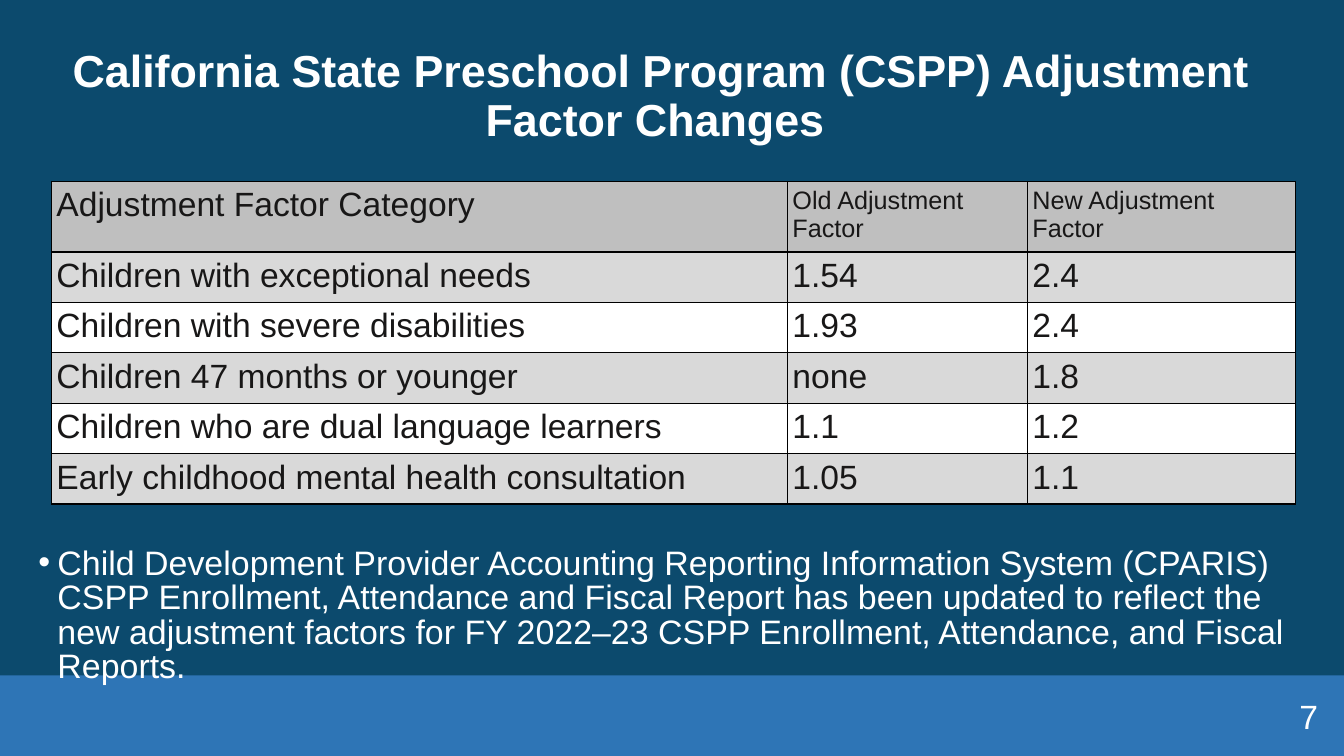
from dataclasses import dataclass

from lxml import etree
from pptx import Presentation
from pptx.dml.color import RGBColor
from pptx.enum.shapes import MSO_SHAPE
from pptx.enum.text import MSO_ANCHOR, MSO_AUTO_SIZE, PP_ALIGN
from pptx.oxml.ns import qn
from pptx.util import Inches, Pt

RECT = MSO_SHAPE.RECTANGLE
MIDDLE = MSO_ANCHOR.MIDDLE
FIXED = MSO_AUTO_SIZE.NONE
LEFT, CENTER, RIGHT = PP_ALIGN.LEFT, PP_ALIGN.CENTER, PP_ALIGN.RIGHT

TITLE = "California State Preschool Program (CSPP) Adjustment Factor Changes "
HEAD = ("Adjustment Factor Category", "Old Adjustment\nFactor", "New Adjustment\nFactor")
FACTORS = [
    ("Children with exceptional needs", "1.54", "2.4"),
    ("Children with severe disabilities", "1.93", "2.4"),
    ("Children 47 months or younger", "none", "1.8"),
    ("Children who are dual language learners", "1.1", "1.2"),
    ("Early childhood mental health consultation", "1.05", "1.1"),
]
NOTE = (
    "Child Development Provider Accounting Reporting Information System (CPARIS) "
    "CSPP Enrollment, Attendance and Fiscal Report has been updated to reflect the "
    "new adjustment factors for FY 2022–23 CSPP Enrollment, Attendance, and Fiscal Reports."
)
PAGE = "7"
COLS = (7.3, 2.38, 2.66)
HEAD_H, ROW_H = 0.7, 0.5


@dataclass(frozen=True)
class Theme:
    font: str = "Arial"
    back: str = "0C4A6D"
    band: str = "2E75B6"
    light: str = "FFFFFF"
    ink: str = "181717"
    head: str = "BFBFBF"
    stripe: str = "D9D9D9"
    rule: str = "000000"
    title: float = 32
    text: float = 24
    note: float = 24.2
    small: float = 18


LOOK = Theme()


def paint(fill, color):
    fill.solid()
    fill.fore_color.rgb = RGBColor.from_string(color)


def place(shape, left, top, width, height):
    shape.left, shape.top = Inches(left), Inches(top)
    shape.width, shape.height = Inches(width), Inches(height)


def style(frame, size, color, align=LEFT, bold=False, lines=None):
    for para in frame.paragraphs:
        para.alignment = align
        para.font.name, para.font.size = LOOK.font, Pt(size)
        para.font.bold = bold
        para.font.color.rgb = RGBColor.from_string(color)
        if lines:
            para.line_spacing = lines
            para.space_before = Pt(0)


def border(cell):
    """Draw a 1 pt rule on all four sides; rules must precede the cell's fill."""
    props = cell._tc.get_or_add_tcPr()
    for spot, side in enumerate(("lnL", "lnR", "lnT", "lnB")):
        line = etree.Element(qn("a:" + side), w=str(Pt(1)))
        solid = etree.SubElement(line, qn("a:solidFill"))
        etree.SubElement(solid, qn("a:srgbClr"), val=LOOK.rule)
        props.insert(spot, line)


def add_band(slide):
    band = slide.shapes.add_shape(RECT, 0, Inches(6.7), Inches(13.33), Inches(0.8))
    band.shadow.inherit = False
    paint(band.fill, LOOK.band)
    band.line.fill.background()
    node = band._element
    node.getparent().insert(2, node)  # behind the placeholders


def add_title(slide):
    title = slide.shapes.title
    place(title, 0.06, 0.24, 13, 1.45)
    frame = title.text_frame
    frame.text = TITLE
    frame.auto_size, frame.vertical_anchor = FIXED, MIDDLE
    style(frame, LOOK.title, LOOK.light, CENTER, True, 0.9)


def add_factors(slide):
    rows = [HEAD, *FACTORS]
    heights = [HEAD_H] + [ROW_H] * len(FACTORS)
    table = slide.shapes.add_table(
        len(rows), len(COLS), Inches(0.51), Inches(1.8),
        Inches(sum(COLS)), Inches(sum(heights))).table
    for col, width in zip(table.columns, COLS):
        col.width = Inches(width)
    for r, (row, height) in enumerate(zip(rows, heights)):
        table.rows[r].height = Inches(height)
        color = LOOK.head if r == 0 else LOOK.stripe if r % 2 else LOOK.light
        for c, text in enumerate(row):
            cell = table.cell(r, c)
            cell.text = text
            cell.margin_left = cell.margin_right = Inches(0.05)
            cell.margin_top = cell.margin_bottom = Inches(0.05)
            paint(cell.fill, color)
            border(cell)
            size = LOOK.small if r == 0 and c else LOOK.text
            style(cell.text_frame, size, LOOK.ink)


def add_note(slide):
    body = slide.placeholders[1]
    place(body, 0.28, 4.92, 12.89, 1.88)
    frame = body.text_frame
    frame.text = NOTE
    frame.auto_size = FIXED
    frame.margin_top = Inches(0.52)
    style(frame, LOOK.note, LOOK.light, lines=0.84)
    props = frame.paragraphs[0]._p.get_or_add_pPr()
    props.set("marL", str(Inches(0.19)))
    props.set("indent", str(-Inches(0.19)))
    etree.SubElement(props, qn("a:buChar"), char="•")
    # Bullets must come before the default run properties.
    run = props.find(qn("a:defRPr"))
    if run is not None:
        props.append(run)


def add_page(slide):
    box = slide.shapes.add_textbox(Inches(10.17), Inches(6.9), Inches(3), Inches(0.4))
    frame = box.text_frame
    frame.word_wrap, frame.vertical_anchor = True, MIDDLE
    frame.text = PAGE
    style(frame, LOOK.text, LOOK.light, RIGHT)


def main():
    deck = Presentation()
    deck.slide_width, deck.slide_height = Inches(13.33), Inches(7.5)
    slide = deck.slides.add_slide(deck.slide_layouts[1])
    paint(slide.background.fill, LOOK.back)
    add_band(slide)
    add_title(slide)
    add_factors(slide)
    add_note(slide)
    add_page(slide)
    deck.save("out.pptx")


if __name__ == "__main__":
    main()
